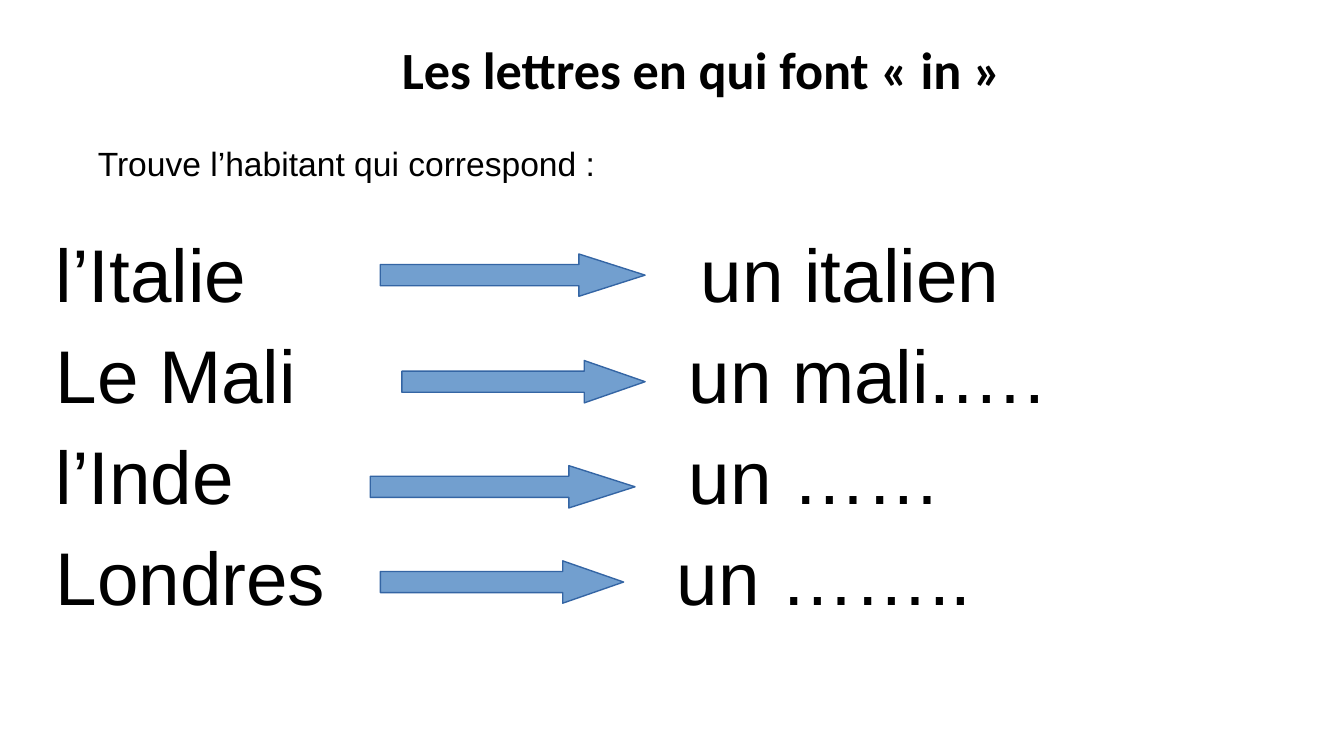
from lxml import etree
from pptx import Presentation
from pptx.dml.color import RGBColor
from pptx.enum.shapes import MSO_SHAPE
from pptx.enum.text import PP_ALIGN
from pptx.oxml.ns import qn
from pptx.util import Inches, Pt

RIGHT_ARROW = MSO_SHAPE.RIGHT_ARROW
LEFT, CENTER = PP_ALIGN.LEFT, PP_ALIGN.CENTER
WIDTH = Inches(10)
HEIGHT = WIDTH * 9 // 16
BLANK_LAYOUT = 6
ARROW_HEIGHT = 0.056
HEAD_SHARE = 0.25

TITLE_FONT = {"name": "Calibri", "size": Pt(28), "bold": True}
PROMPT_FONT = {"name": "Arial", "size": Pt(18)}
WORD_FONT = {"name": "Arial", "size": Pt(40)}
PLAIN = {"alignment": LEFT}
CENTERED = {"alignment": CENTER}
SPACED = {"alignment": LEFT, "space_before": Pt(6)}

EXERCISES = [
    ("l’Italie", "un italien", 0.48, (0.283, 0.336, 0.197)),
    ("Le Mali", "un mali.….", 0.471, (0.299, 0.477, 0.181)),
    ("l’Inde", "un ……", 0.471, (0.2755, 0.616, 0.197)),
    ("Londres", "un ……..", 0.462, (0.283, 0.742, 0.181)),
]


def color(hex_string):
    return RGBColor.from_string(hex_string)


def across(share):
    return round(WIDTH * share)


def down(share):
    return round(HEIGHT * share)


def apply_format(target, values):
    for name, value in values.items():
        setattr(target, name, value)


def add_text(slide, box, lines, font, layout):
    left, top, width, height = box
    shape = slide.shapes.add_textbox(across(left), down(top), across(width), down(height))
    frame = shape.text_frame
    frame.word_wrap = True
    for index, line in enumerate(lines):
        paragraph = frame.add_paragraph() if index else frame.paragraphs[0]
        apply_format(paragraph, layout)
        run = paragraph.add_run()
        run.text = line
        apply_format(run.font, font)
        run.font.color.rgb = color("000000")
    return frame


def add_tab_stop(paragraph, share):
    properties = paragraph._p.get_or_add_pPr()
    tab_list = etree.SubElement(properties, qn("a:tabLst"))
    etree.SubElement(tab_list, qn("a:tab"), pos=str(across(share)), algn="l")


def add_arrow(slide, left, top, width):
    shape = slide.shapes.add_shape(
        RIGHT_ARROW, across(left), down(top), across(width), down(ARROW_HEIGHT)
    )
    shape.adjustments[0] = 0.5
    shape.adjustments[1] = HEAD_SHARE * shape.width / shape.height
    shape.shadow.inherit = False
    shape.fill.solid()
    shape.fill.fore_color.rgb = color("729FCF")
    shape.line.color.rgb = color("3465A4")
    shape.line.width = Pt(0.75)


def add_exercises(slide):
    lines = [f"{country}\t{inhabitant}" for country, inhabitant, _, _ in EXERCISES]
    frame = add_text(slide, (0.0315, 0.293, 0.992, 0.718), lines, WORD_FONT, SPACED)
    for paragraph, (_, _, tab_stop, arrow) in zip(frame.paragraphs, EXERCISES):
        add_tab_stop(paragraph, tab_stop)
        add_arrow(slide, *arrow)


def main():
    presentation = Presentation()
    presentation.slide_width, presentation.slide_height = WIDTH, HEIGHT
    slide = presentation.slides.add_slide(presentation.slide_layouts[BLANK_LAYOUT])
    add_text(slide, (0.134, 0.041, 0.776, 0.126),
             ["Les lettres en qui font « in »"], TITLE_FONT, CENTERED)
    add_text(slide, (0.063, 0.181, 0.803, 0.068),
             ["Trouve l’habitant qui correspond :"], PROMPT_FONT, PLAIN)
    add_exercises(slide)
    presentation.save("out.pptx")


if __name__ == "__main__":
    main()
